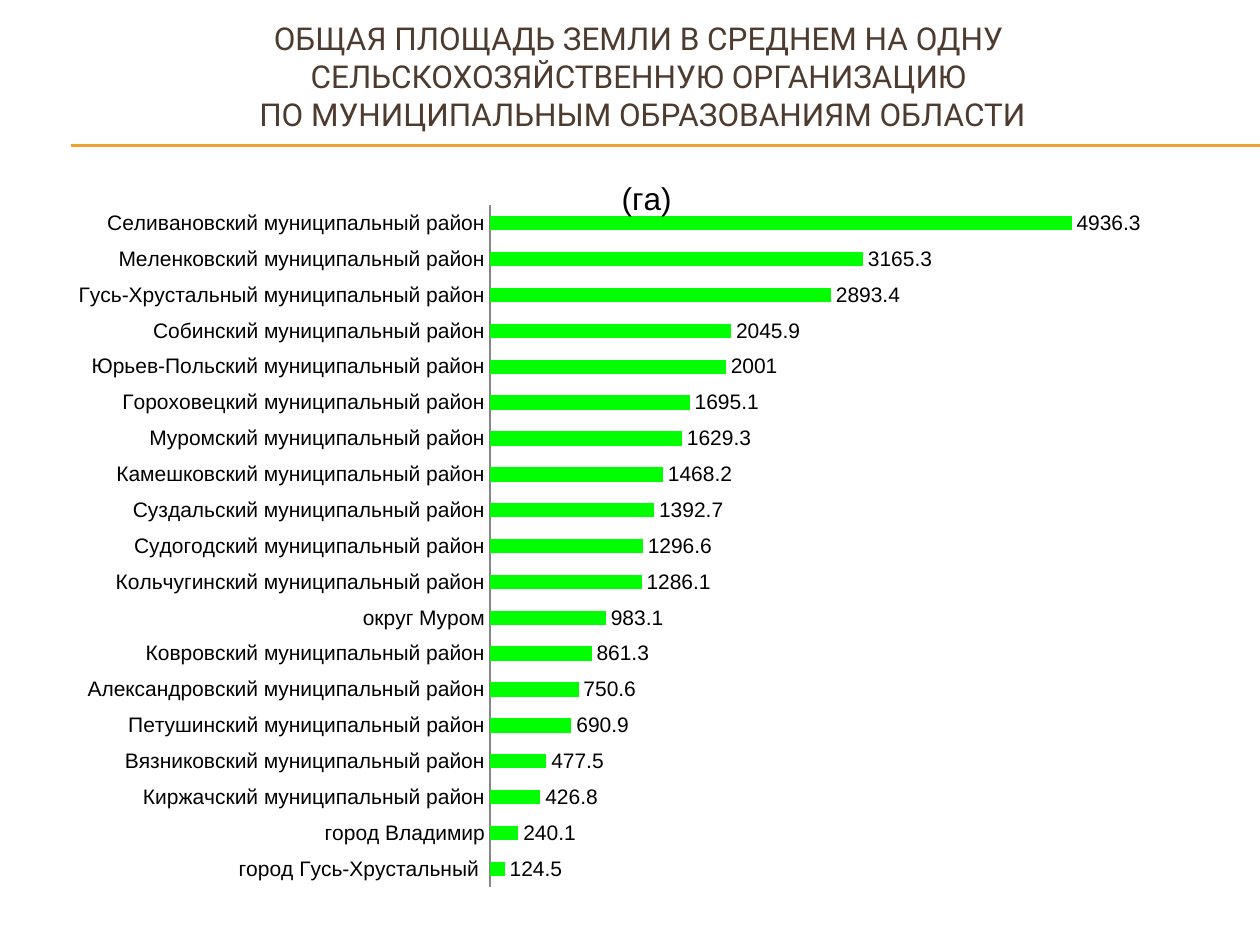
from dataclasses import dataclass

from lxml.etree import SubElement
from pptx import Presentation
from pptx.chart.data import CategoryChartData
from pptx.dml.color import RGBColor
from pptx.enum.chart import XL_CHART_TYPE as ChartType
from pptx.enum.chart import XL_LABEL_POSITION as LabelPosition
from pptx.enum.chart import XL_TICK_MARK as TickMark
from pptx.enum.shapes import MSO_CONNECTOR as Connector
from pptx.enum.text import MSO_ANCHOR as Anchor
from pptx.enum.text import PP_ALIGN as Align
from pptx.oxml.ns import qn
from pptx.util import Inches, Pt


@dataclass(frozen=True)
class Theme:
    heading: RGBColor = RGBColor.from_string("4E3B30")
    rule: RGBColor = RGBColor.from_string("F0A22E")
    bar: RGBColor = RGBColor.from_string("00FF00")
    axis: RGBColor = RGBColor.from_string("868686")
    text: RGBColor = RGBColor.from_string("000000")
    heading_font: str = "Roboto"
    chart_font: str = "Arial"
    title_size: int = 18
    label_size: int = 12
    base_size: int = 10


theme = Theme()


def format_font(font, name, size, color):
    font.name = name
    font.size = Pt(size)
    font.bold = False
    font.color.rgb = color


def write_text(frame, text, font, size, color, align=Align.CENTER):
    frame.text = text
    paragraph = frame.paragraphs[0]
    paragraph.alignment = align
    for run in paragraph.runs:
        format_font(run.font, font, size, color)


presentation = Presentation()
presentation.slide_width = Inches(10)
presentation.slide_height = Inches(7.5)
slide = presentation.slides.add_slide(presentation.slide_layouts[5])

# Double rule under the heading
for rule_top in (1.15, 1.16):
    rule = slide.shapes.add_connector(
        Connector.STRAIGHT, Inches(0.56), Inches(rule_top),
        presentation.slide_width, Inches(rule_top))
    rule.line.color.rgb = theme.rule
    rule.line.width = Pt(0.75)
    SubElement(rule._element.spPr, qn("a:effectLst"))

# Heading
title = slide.shapes.title
title.left, title.top = Inches(0.35), Inches(0.21)
title.width, title.height = Inches(9.5), Inches(0.79)
write_text(title.text_frame,
           "ОБЩАЯ ПЛОЩАДЬ ЗЕМЛИ В СРЕДНЕМ НА ОДНУ \v"
           "СЕЛЬСКОХОЗЯЙСТВЕННУЮ ОРГАНИЗАЦИЮ \v"
           "ПО МУНИЦИПАЛЬНЫМ ОБРАЗОВАНИЯМ ОБЛАСТИ",
           font=theme.heading_font, size=theme.title_size, color=theme.heading)
title.text_frame.vertical_anchor = Anchor.MIDDLE
title.text_frame.word_wrap = True

# Average land area, smallest first: the bar chart stacks upwards
district = " муниципальный район"
areas = {
    "город Гусь-Хрустальный ": 124.5,
    "город Владимир": 240.1,
    "Киржачский" + district: 426.8,
    "Вязниковский" + district: 477.5,
    "Петушинский" + district: 690.9,
    "Александровский" + district: 750.6,
    "Ковровский" + district: 861.3,
    "округ Муром": 983.1,
    "Кольчугинский" + district: 1286.1,
    "Судогодский" + district: 1296.6,
    "Суздальский" + district: 1392.7,
    "Камешковский" + district: 1468.2,
    "Муромский" + district: 1629.3,
    "Гороховецкий" + district: 1695.1,
    "Юрьев-Польский" + district: 2001,
    "Собинский" + district: 2045.9,
    "Гусь-Хрустальный" + district: 2893.4,
    "Меленковский" + district: 3165.3,
    "Селивановский" + district: 4936.3,
}
chart_data = CategoryChartData()
chart_data.categories = list(areas)
chart_data.add_series("Series 1", list(areas.values()))
chart_width, chart_height = 9.29, 5.88
chart = slide.shapes.add_chart(
    ChartType.BAR_CLUSTERED, Inches(0.43), Inches(1.31),
    Inches(chart_width), Inches(chart_height), chart_data).chart
format_font(chart.font, theme.heading_font, theme.base_size, theme.text)
chart.has_legend = False
chart.has_title = True
caption = chart.chart_title
write_text(caption.text_frame, "(га)", font=theme.chart_font,
           size=theme.title_size, color=theme.text)
caption.include_in_layout = False

category_axis = chart.category_axis
category_axis.major_tick_mark = TickMark.NONE
category_axis.minor_tick_mark = TickMark.NONE
category_axis.has_major_gridlines = False
category_axis.format.line.color.rgb = theme.axis
category_axis.format.line.width = Pt(0.75)
format_font(category_axis.tick_labels.font, theme.chart_font,
            theme.label_size, theme.text)

value_axis = chart.value_axis
value_axis.minimum_scale = 0
value_axis.maximum_scale = 6000
value_axis.has_major_gridlines = False
value_axis.visible = False

plot = chart.plots[0]
plot.gap_width = 150
plot.overlap = -25
plot.vary_by_categories = False
fill = plot.series[0].format.fill
fill.solid()
fill.fore_color.rgb = theme.bar
plot.has_data_labels = True
labels = plot.data_labels
labels.show_value = True
labels.number_format = "General"
labels.number_format_is_linked = False
labels.position = LabelPosition.OUTSIDE_END
format_font(labels.font, theme.chart_font, theme.label_size, theme.text)

# Fixed places as shares of the chart: caption above, bars in the area below
edges = {"xMode": "edge", "yMode": "edge"}
caption_place = {**edges, "x": 0.48, "y": 0.01}
plot_place = {"layoutTarget": "inner", **edges,
              "x": 3.46 / chart_width, "y": 0.32 / chart_height,
              "w": 5.61 / chart_width, "h": 5.41 / chart_height}
for owner, position, place in (
        (caption._element, 1, caption_place),
        (chart._chartSpace.chart.plotArea, 0, plot_place)):
    for automatic_layout in owner.findall(qn("c:layout")):
        owner.remove(automatic_layout)
    layout = SubElement(owner, qn("c:layout"))
    owner.insert(position, layout)
    manual = SubElement(layout, qn("c:manualLayout"))
    for tag, value in place.items():
        SubElement(manual, qn("c:" + tag)).set("val", str(value))

presentation.save("out.pptx")
